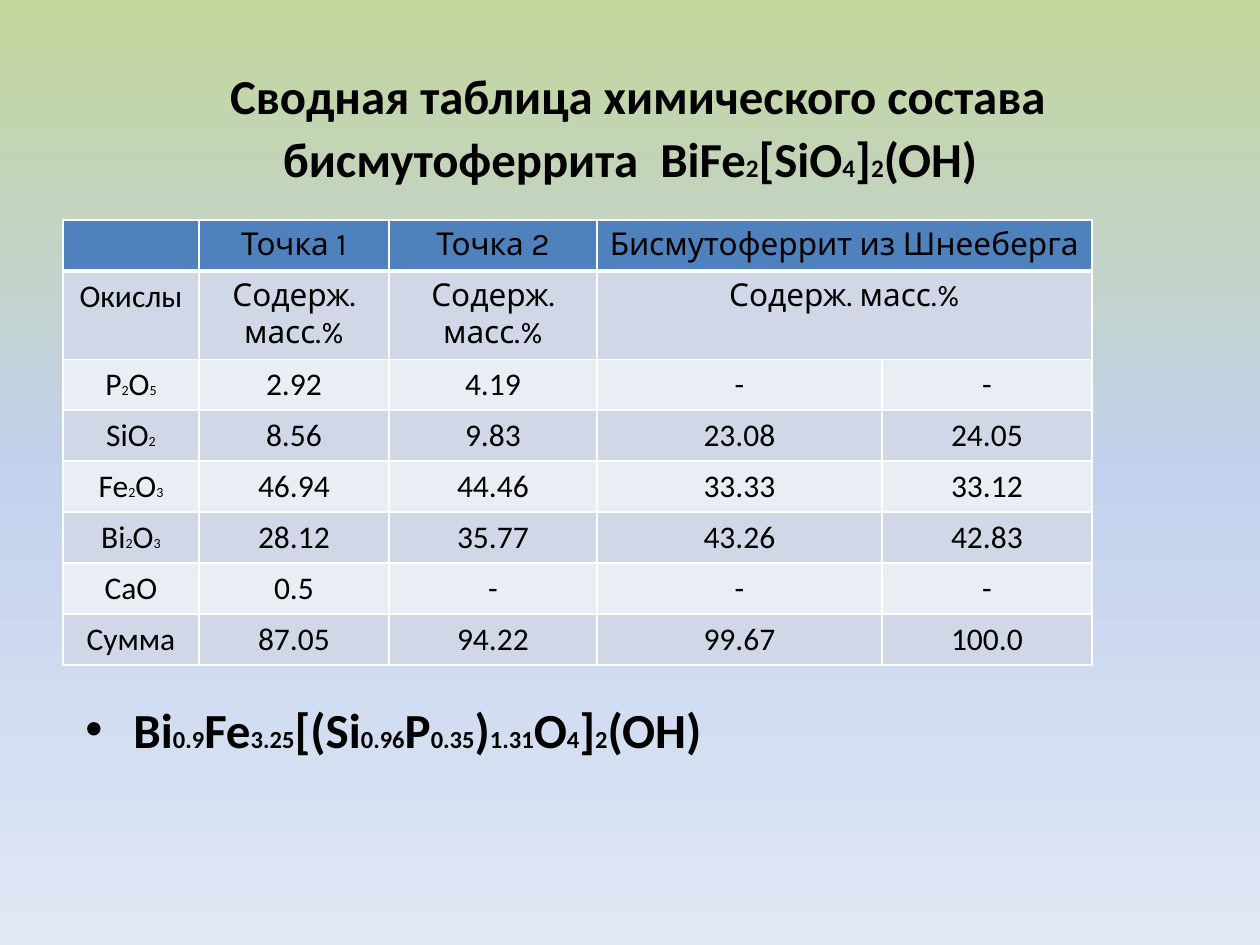
from copy import deepcopy
from lxml.etree import SubElement
from pptx import Presentation
from pptx.dml.color import RGBColor
from pptx.enum.text import MSO_ANCHOR, PP_ALIGN
from pptx.oxml.ns import qn
from pptx.util import Pt

PX = 7257  # EMU per px, 126 px to the inch
rgb = RGBColor.from_string


def add_runs(p, text, size, small, font="Calibri", bold=False):
    """Parts between bars alternate between full-size text and small indices."""
    for i, part in enumerate(text.split("|")):
        r = p.add_run()
        r.text = part
        r.font.size = Pt(small if i % 2 else size)
        r.font.name = font
        r.font.bold = bold
        r.font.color.rgb = rgb("000000")


def add_border(cell, side, width):
    ln = SubElement(cell._tc.get_or_add_tcPr(), qn(f"a:{side}"), w=str(Pt(width)))
    fill = SubElement(ln, qn("a:solidFill"))
    SubElement(fill, qn("a:srgbClr"), val="FFFFFF")


prs = Presentation()
prs.slide_width, prs.slide_height = 1260 * PX, 945 * PX
s = prs.slides.add_slide(prs.slide_layouts[6])

# Background gradient, top to bottom
bg = s.background.fill
bg.gradient()
bg.gradient_angle = 270
first = bg.gradient_stops[0]._gs
first.addnext(deepcopy(first))
for stop, pos, color in zip(bg.gradient_stops, (0, 0.5, 1), ("C3D69B", "C2D1ED", "E1E8F5")):
    stop.position = pos
    stop.color.rgb = rgb(color)

# Title
tf = s.shapes.add_textbox(63 * PX, 38 * PX, 1134 * PX, 157 * PX).text_frame
tf.word_wrap = True
tf.vertical_anchor = MSO_ANCHOR.MIDDLE
p = tf.paragraphs[0]
p.alignment = PP_ALIGN.CENTER
add_runs(p, " ", 39.6, 14.4, bold=True)
add_runs(p, "Сводная таблица химического состава бисмутоферрита  BiFe|2|[SiO|4|]|2|(OH)",
         27.9, 14.4, bold=True)

# Composition table
rows = [
    ["", "Точка 1", "Точка 2", "Бисмутоферрит из Шнееберга", ""],
    ["Окислы", "Содерж. масс.%", "Содерж. масс.%", "Содерж. масс.%", ""],
    ["P|2|O|5", "2.92", "4.19", "-", "-"],
    ["SiO|2", "8.56", "9.83", "23.08", "24.05"],
    ["Fe|2|O|3", "46.94", "44.46", "33.33", "33.12"],
    ["Bi|2|O|3", "28.12", "35.77", "43.26", "42.83"],
    ["CaO", "0.5", "-", "-", "-"],
    ["Сумма", "87.05", "94.22", "99.67", "100.0"],
]
widths = [136, 190, 208, 285, 210]
row_h = 51
table = s.shapes.add_table(len(rows), len(widths), 63 * PX, 220 * PX,
                           sum(widths) * PX, len(rows) * row_h * PX).table
for col, width in zip(table.columns, widths):
    col.width = width * PX
for i, row in enumerate(rows):
    table.rows[i].height = row_h * PX
    for j, text in enumerate(row):
        cell = table.cell(i, j)
        for side in ("lnL", "lnR", "lnT", "lnB"):
            thick = (i, side) in ((0, "lnB"), (1, "lnT"))
            add_border(cell, side, 3 if thick else 1)
        cell.fill.solid()
        cell.fill.fore_color.rgb = rgb("4F81BD" if i == 0 else "D0D8E8" if i % 2 else "E9EDF4")
        p = cell.text_frame.paragraphs[0]
        p.alignment = PP_ALIGN.CENTER
        if text:
            add_runs(p, text, 18, 8, "Karla" if i < 2 and j else "Calibri")
for i in (0, 1):
    table.cell(i, 3).merge(table.cell(i, 4))

# Calculated formula
tf = s.shapes.add_textbox(73 * PX, 693 * PX, 809 * PX, 157 * PX).text_frame
tf.word_wrap = True
p = tf.paragraphs[0]
pPr = p._p.get_or_add_pPr()
pPr.set("marL", str(48 * PX))
pPr.set("indent", str(-48 * PX))
SubElement(pPr, qn("a:buFont"), typeface="Arial")
SubElement(pPr, qn("a:buChar"), char="•")
add_runs(p, "Bi|0.9|Fe|3.25|[(Si|0.96|Р|0.35|)|1.31|O|4|]|2|(OH)", 28, 14, bold=True)

prs.save("out.pptx")
